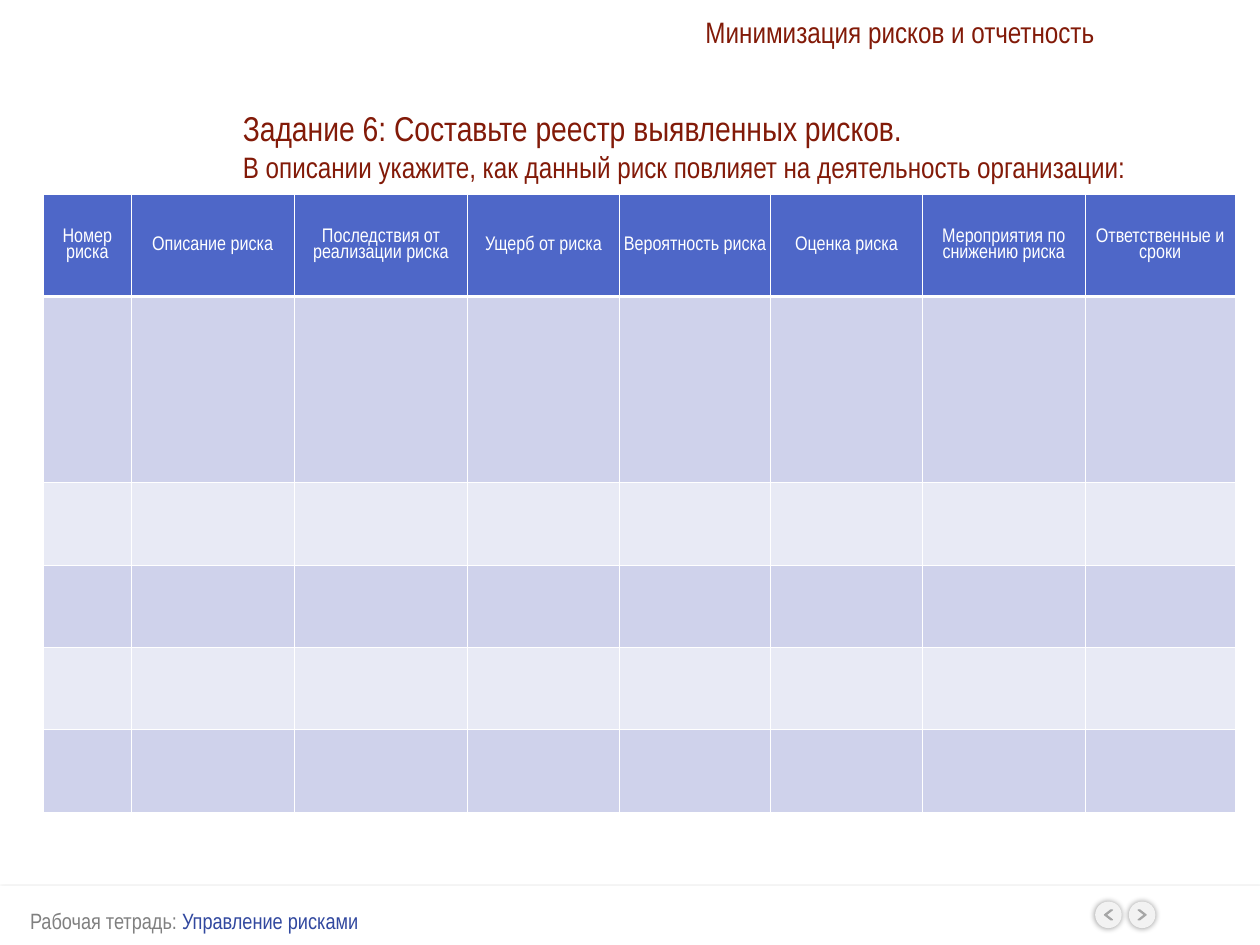
from lxml import etree
from pptx import Presentation
from pptx import util as u
from pptx.dml.color import RGBColor
from pptx.enum import shapes, text
from pptx.oxml import ns

WIDTH, HEIGHT = u.Inches(14.22), u.Inches(10.67)
FONT = "Arial Narrow"
WHITE = RGBColor(0xFF, 0xFF, 0xFF)
BLACK = RGBColor(0, 0, 0)
MAROON = RGBColor(0x82, 0x1A, 0x08)
GRAY = RGBColor(0x80, 0x80, 0x80)
NAVY = RGBColor(0x31, 0x48, 0x9F)
BUTTON = RGBColor(0xF2, 0xF2, 0xF2)
ARROW_FILL = RGBColor(0x4F, 0x81, 0xBD)
ARROW_LINE = RGBColor(0xA6, 0xA6, 0xA6)
HEADER = RGBColor(0x4E, 0x67, 0xC8)
BANDS = (RGBColor(0xCF, 0xD2, 0xEB), RGBColor(0xE8, 0xEA, 0xF5))

HEADINGS = (
    "Номер риска", "Описание риска", "Последствия от реализации риска",
    "Ущерб от риска", "Вероятность риска", "Оценка риска",
    "Мероприятия по снижению риска", "Ответственные и сроки",
)
COLUMNS = (0.99, 1.84, 1.96, 1.71, 1.71, 1.71, 1.84, 1.69)
ROWS = (1.15, 2.1, 0.93, 0.93, 0.93, 0.93)


def inches(*lengths):
    return [u.Inches(length) for length in lengths]


def element(parent, tag, **attributes):
    child = etree.SubElement(parent, ns.qn(tag))
    for name, value in attributes.items():
        child.set(name, str(value))
    return child


def add_shadow(shape, opacity, blur, distance=0, angle=0):
    effects = element(shape._element.spPr, "a:effectLst")
    shadow = element(effects, "a:outerShdw", blurRad=u.Pt(blur), dist=u.Pt(distance),
                     dir=angle * 60000, algn="ctr", rotWithShape=0)
    color = element(shadow, "a:srgbClr", val=BLACK)
    element(color, "a:alpha", val=opacity * 1000)


def add_filled(slide, kind, box, color):
    shape = slide.shapes.add_shape(kind, *inches(*box))
    shape.fill.solid()
    shape.fill.fore_color.rgb = color
    shape.line.fill.background()
    return shape


def set_frame(shape, wrap=False):
    frame = shape.text_frame
    frame.margin_left = frame.margin_right = u.Inches(0.07)
    frame.margin_top = frame.margin_bottom = u.Inches(0.07)
    frame.vertical_anchor = text.MSO_ANCHOR.TOP
    frame.auto_size = text.MSO_AUTO_SIZE.NONE
    frame.word_wrap = wrap
    return frame


def set_font(paragraph, size, color=None):
    paragraph.font.name = FONT
    paragraph.font.size = u.Pt(size)
    if color is not None:
        paragraph.font.color.rgb = color


def place(shape, box):
    shape.left, shape.top, shape.width, shape.height = inches(*box)


def add_section_title(slide, box):
    title = slide.shapes.title
    place(title, box)
    paragraph = set_frame(title, wrap=True).paragraphs[0]
    paragraph.text = "Минимизация рисков и отчетность"
    paragraph.alignment = text.PP_ALIGN.RIGHT
    set_font(paragraph, 24, MAROON)


def add_task(slide, box):
    body = slide.placeholders[1]
    place(body, box)
    frame = set_frame(body)
    frame.text = (
        "Задание 6: Составьте реестр выявленных рисков.\n"
        "В описании укажите, как данный риск повлияет на деятельность организации:"
    )
    for paragraph, size in zip(frame.paragraphs, (28, 24)):
        properties = paragraph._p.get_or_add_pPr()
        properties.set("marL", "0")
        properties.set("indent", "0")
        element(properties, "a:buNone")
        paragraph.space_before = u.Pt(0)
        set_font(paragraph, size, MAROON)


def set_borders(cell, **widths):
    properties = cell._tc.get_or_add_tcPr()
    for index, side in enumerate("LRTB"):
        line = element(properties, f"a:ln{side}", w=u.Pt(widths.get(side, 1)))
        element(element(line, "a:solidFill"), "a:srgbClr", val=WHITE)
        properties.insert(index, line)


def add_heading(cell, heading):
    cell.vertical_anchor = text.MSO_ANCHOR.MIDDLE
    cell.margin_left = cell.margin_right = u.Inches(0.05)
    cell.margin_top = cell.margin_bottom = u.Inches(0.05)
    paragraph = cell.text_frame.paragraphs[0]
    paragraph.text = heading
    paragraph.alignment = text.PP_ALIGN.CENTER
    paragraph.line_spacing = 0.85
    set_font(paragraph, 16, WHITE)
    paragraph.font.bold = False


def add_risk_register(slide, left, top):
    box = inches(left, top, sum(COLUMNS), sum(ROWS))
    table = slide.shapes.add_table(len(ROWS), len(COLUMNS), *box).table
    for column, width in zip(table.columns, COLUMNS):
        column.width = u.Inches(width)
    for index, (row, height) in enumerate(zip(table.rows, ROWS)):
        row.height = u.Inches(height)
        for cell in row.cells:
            cell.fill.solid()
            cell.fill.fore_color.rgb = BANDS[(index - 1) % 2] if index else HEADER
            set_borders(cell, T=3 if index == 1 else 1, B=1 if index else 3)
    for cell, heading in zip(table.rows[0].cells, HEADINGS):
        add_heading(cell, heading)


def add_button(slide, left, top, size, backward):
    circle = add_filled(slide, shapes.MSO_SHAPE.OVAL, (left, top, size, size), BUTTON)
    add_shadow(circle, 40, 5)
    width, height = 0.3 * size, 0.37 * size
    chevron = add_filled(
        slide, shapes.MSO_SHAPE.CHEVRON,
        (left + (size - width) / 2, top + (size - height) / 2, width, height), ARROW_FILL)
    chevron.shadow.inherit = False
    chevron.adjustments[0] = 0.79
    chevron.line.color.rgb = ARROW_LINE
    chevron.line.width = u.Pt(1)
    if backward:
        chevron._element.spPr.get_or_add_xfrm().set("flipH", "1")


def add_footer(slide, left, top, width, height):
    bar = add_filled(slide, shapes.MSO_SHAPE.RECTANGLE, (left, top, width, height), WHITE)
    add_shadow(bar, 35, 3, 1.8, 90)
    for column in range(2):
        add_button(slide, left + 12.36 + 0.38 * column, top + 0.18, 0.3, column == 0)
    label = slide.shapes.add_textbox(*inches(left + 0.27, top + 0.17, 3.9, 0.43))
    paragraph = set_frame(label).paragraphs[0]
    set_font(paragraph, 18)
    for words, color in (("Рабочая тетрадь: ", GRAY), ("Управление рисками", NAVY)):
        run = paragraph.add_run()
        run.text = words
        run.font.color.rgb = color


def main():
    presentation = Presentation()
    presentation.slide_width, presentation.slide_height = WIDTH, HEIGHT
    slide = presentation.slides.add_slide(presentation.slide_layouts[1])
    add_footer(slide, 0, 10, WIDTH.inches, 0.67)
    add_task(slide, (2.67, 1.14, 10.14, 0.96))
    add_section_title(slide, (7.42, 0.09, 5, 0.52))
    add_risk_register(slide, 0.49, 2.2)
    presentation.save("out.pptx")


if __name__ == "__main__":
    main()
